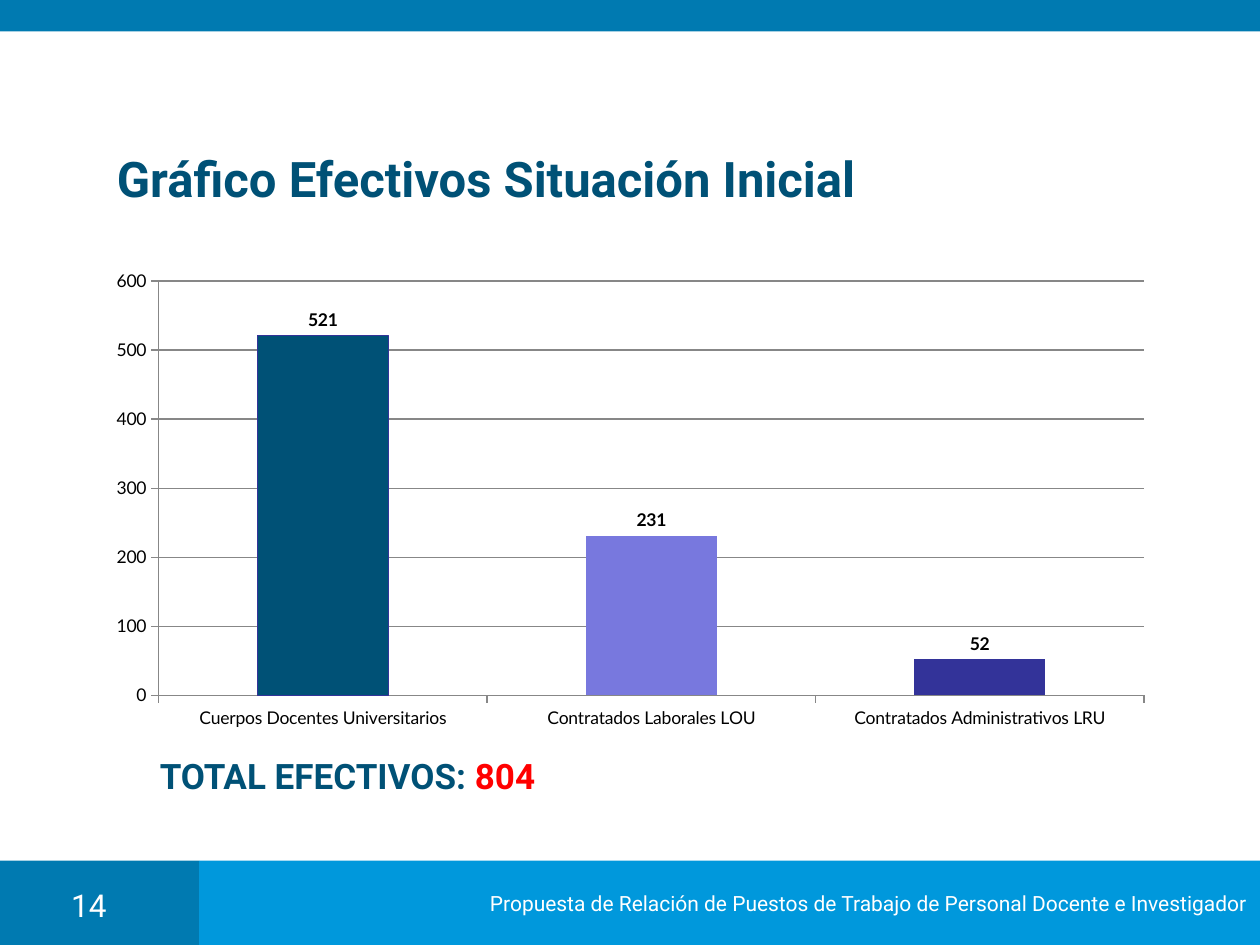
from pptx import Presentation, util as u
from pptx.chart import data as chart_data
from pptx.dml.color import RGBColor
from pptx.enum import chart as ch, shapes, text
from pptx.oxml import parse_xml
from pptx.oxml.ns import nsdecls, qn

# Content
TITLE = "Gráfico Efectivos Situación Inicial"
FOOTER = "Propuesta de Relación de Puestos de Trabajo de Personal Docente e Investigador"
NUMBER = "14"
STAFF = [  # category, people, bar colour
    ("Cuerpos Docentes Universitarios", 521, "navy"),
    ("Contratados Laborales LOU", 231, "lilac"),
    ("Contratados Administrativos LRU", 52, "indigo"),
]
TOTAL = ("TOTAL EFECTIVOS: ", str(sum(people for _, people, _ in STAFF)))

COLORS = {
    "band": "007AB1", "footer": "0098DC", "navy": "005176", "lilac": "7878DE",
    "indigo": "333399", "red": "FF0000", "white": "FFFFFF", "black": "000000",
    "grid": "878787",
}
WIDTH, HEIGHT = 10, 7.5
FOOT_HEIGHT, NUMBER_WIDTH = 0.67, 1.58
FOOT_TOP = HEIGHT - FOOT_HEIGHT
PLOT = {"x": 0.06, "y": 0.04, "w": 0.92, "h": 0.87}  # shares of the chart frame


def color(name):
    return RGBColor.from_string(COLORS[name])


def inches(*lengths):
    return [u.Inches(length) for length in lengths]


def add_band(page, fill, *place):
    band = page.shapes.add_shape(shapes.MSO_SHAPE.RECTANGLE, *inches(*place))
    band.shadow.inherit = False
    band.fill.solid()
    band.fill.fore_color.rgb = color(fill)
    band.line.fill.background()
    return band


def write(box, parts, size, bold=False, align=text.PP_ALIGN.LEFT,
          anchor=text.MSO_ANCHOR.TOP, wrap=True):
    frame = box.text_frame
    frame.word_wrap = wrap
    frame.vertical_anchor = anchor
    para = frame.paragraphs[0]
    para.alignment = align
    for words, shade in parts:
        span = para.add_run()
        span.text = words
        span.font.name, span.font.size, span.font.bold = "Roboto", u.Pt(size), bold
        span.font.color.rgb = color(shade)


def add_staff_chart(page, *place):
    data = chart_data.CategoryChartData()
    data.categories = [name for name, _, _ in STAFF]
    data.add_series("Series 1", [people for _, people, _ in STAFF])
    chart = page.shapes.add_chart(
        ch.XL_CHART_TYPE.COLUMN_CLUSTERED, *inches(*place), data).chart
    chart.has_legend = chart.has_title = False
    chart.font.name, chart.font.size = "Lato", u.Pt(10)
    chart.font.color.rgb = color("black")

    # Bars and their labels
    plot = chart.plots[0]
    plot.gap_width, plot.vary_by_categories = 150, False
    series = plot.series[0]
    for index, (_, _, shade) in enumerate(STAFF):
        bar = series.points[index].format
        bar.fill.solid()
        bar.fill.fore_color.rgb = color(shade)
    outline = series.points[0].format.line
    outline.color.rgb, outline.width = color("indigo"), u.Pt(0.75)
    plot.has_data_labels = True
    labels = plot.data_labels
    labels.show_value = True
    labels.position = ch.XL_LABEL_POSITION.OUTSIDE_END
    labels.font.name, labels.font.size, labels.font.bold = "Lato", u.Pt(10), True
    labels.font.color.rgb = color("black")

    # Axes and gridlines
    values = chart.value_axis
    values.minimum_scale, values.maximum_scale, values.major_unit = 0, 600, 100
    values.has_major_gridlines = True
    for axis in (chart.category_axis, values):
        axis.major_tick_mark = ch.XL_TICK_MARK.OUTSIDE
        axis.minor_tick_mark = ch.XL_TICK_MARK.NONE
    for part in (chart.category_axis, values, values.major_gridlines):
        part.format.line.color.rgb = color("grid")
        part.format.line.width = u.Pt(0.75)

    # Fixed plot area
    area = chart.element.find(".//" + qn("c:plotArea"))
    for layout in area.findall(qn("c:layout")):
        area.remove(layout)
    sides = "".join(f'<c:{side} val="{share}"/>' for side, share in PLOT.items())
    area.insert(0, parse_xml(
        f'<c:layout {nsdecls("c")}><c:manualLayout><c:layoutTarget val="inner"/>'
        f'<c:xMode val="edge"/><c:yMode val="edge"/>{sides}</c:manualLayout></c:layout>'))


def main():
    deck = Presentation()
    deck.slide_width, deck.slide_height = inches(WIDTH, HEIGHT)
    page = deck.slides.add_slide(deck.slide_layouts[6])

    # Bands at the top and foot
    add_band(page, "band", 0, FOOT_TOP, NUMBER_WIDTH, FOOT_HEIGHT)
    footer = add_band(page, "footer", NUMBER_WIDTH, FOOT_TOP,
                      WIDTH - NUMBER_WIDTH, FOOT_HEIGHT)
    write(footer, [(FOOTER, "white")], 12, align=text.PP_ALIGN.RIGHT,
          anchor=text.MSO_ANCHOR.MIDDLE, wrap=False)
    add_band(page, "band", 0, 0, WIDTH, 0.25)

    # Title, page number, chart and total
    title = page.shapes.add_textbox(*inches(0.83, 1.2, 8.35, 0.42))
    write(title, [(TITLE, "navy")], 28, bold=True, anchor=text.MSO_ANCHOR.MIDDLE)
    number = page.shapes.add_textbox(*inches(0.35, 6.98, 0.71, 0.32))
    write(number, [(NUMBER, "white")], 18, align=text.PP_ALIGN.CENTER)
    add_staff_chart(page, 0.75, 2.08, 8.5, 3.78)
    total = page.shapes.add_textbox(*inches(1.17, 5.94, 5.94, 0.44))
    write(total, zip(TOTAL, ("navy", "red")), 20, bold=True)

    deck.save("out.pptx")


if __name__ == "__main__":
    main()
